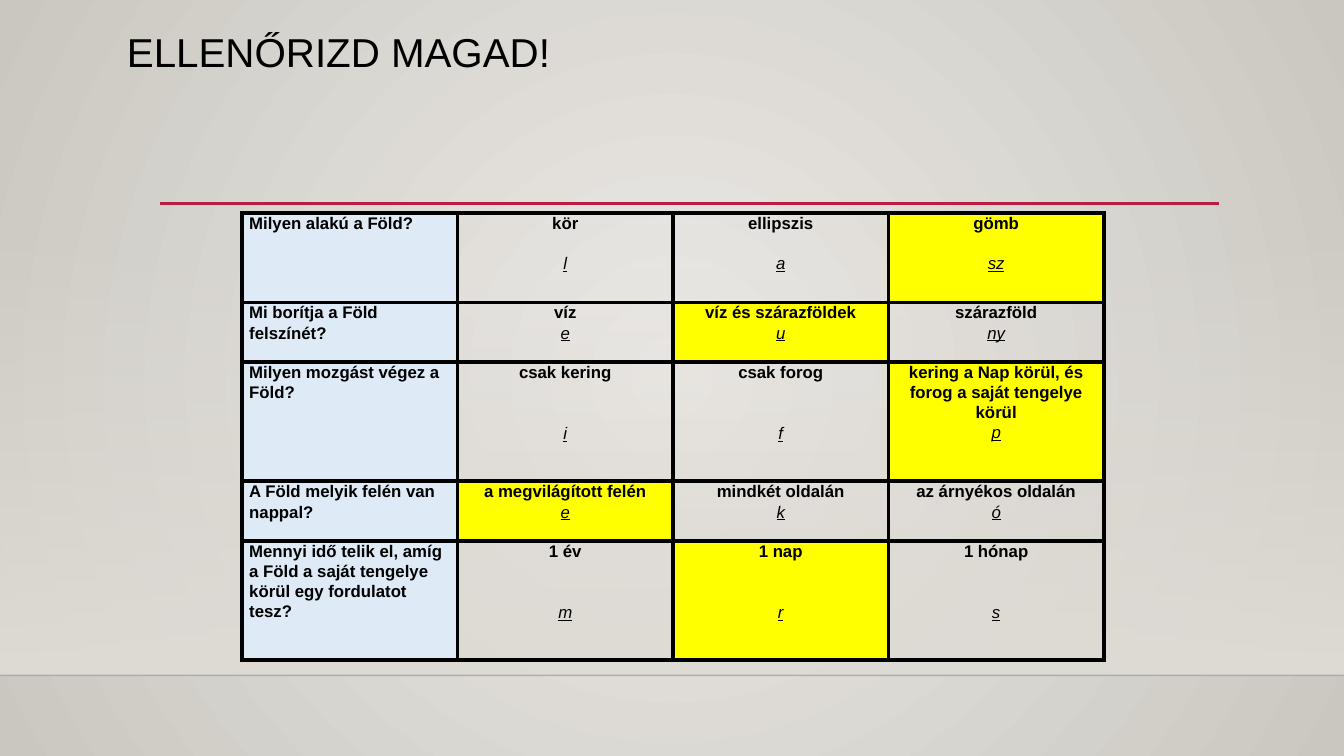
from dataclasses import dataclass

from lxml.etree import SubElement
from pptx import Presentation
from pptx.dml.color import RGBColor
from pptx.enum.shapes import MSO_CONNECTOR as Connector, MSO_SHAPE as Shape
from pptx.enum.text import MSO_ANCHOR as Anchor, PP_ALIGN as Align
from pptx.oxml.ns import qn
from pptx.util import Cm, Pt


@dataclass(frozen=True)
class Theme:
    font: str = "Arial"
    title_size: float = 28.8
    cell_size: float = 12
    blank_line: float = 14.5
    ink: str = "000000"
    accent: str = "B71E42"
    question: str = "DEEAF6"
    correct: str = "FFFF00"
    floor: str = "DFDBD5"
    glow: str = "ECEAE7"
    edge: str = "CAC7C1"


@dataclass(frozen=True)
class Answer:
    text: str
    letter: str
    correct: bool = False
    lines_skipped: int = 0


THEME = Theme()
SLIDE_WIDTH, SLIDE_HEIGHT = Cm(33.87), Cm(19.05)
FLOOR_Y = Cm(17.02)
COLUMN_WIDTH = Cm(5.43)

# Row height in cm, question, answers
QUIZ = [
    (2.26, "Milyen alakú a Föld?", [
        Answer("kör", "l", lines_skipped=1),
        Answer("ellipszis", "a", lines_skipped=1),
        Answer("gömb", "sz", correct=True, lines_skipped=1)]),
    (1.5, "Mi borítja a Föld felszínét?", [
        Answer("víz", "e"),
        Answer("víz és szárazföldek", "u", correct=True),
        Answer("szárazföld", "ny")]),
    (3.01, "Milyen mozgást végez a Föld?", [
        Answer("csak kering", "i", lines_skipped=2),
        Answer("csak forog", "f", lines_skipped=2),
        Answer("kering a Nap körül, és forog a saját tengelye körül", "p",
               correct=True)]),
    (1.5, "A Föld melyik felén van nappal?", [
        Answer("a megvilágított felén", "e", correct=True),
        Answer("mindkét oldalán", "k"),
        Answer("az árnyékos oldalán", "ó")]),
    (3.01, "Mennyi idő telik el, amíg a Föld a saját tengelye körül "
           "egy fordulatot tesz?", [
        Answer("1 év", "m", lines_skipped=2),
        Answer("1 nap", "r", correct=True, lines_skipped=2),
        Answer("1 hónap", "s", lines_skipped=2)]),
]


def rgb(value):
    return RGBColor.from_string(value)


def set_alpha(parent, percent):
    """Make the one RGB colour below parent partly transparent."""
    color = next(parent.iter(qn("a:srgbClr")))
    SubElement(color, qn("a:alpha"), val=str(percent * 1000))


def set_gradient(fill, *colors):
    fill.gradient()
    for stop, color in zip(fill.gradient_stops, colors):
        stop.color.rgb = rgb(color)


def paint_background(page):
    set_gradient(page.background.fill, THEME.glow, THEME.edge)
    gradient = next(page.element.iter(qn("a:gradFill")))
    gradient.remove(gradient.find(qn("a:lin")))
    circle = SubElement(gradient, qn("a:path"), path="circle")
    SubElement(circle, qn("a:fillToRect"),
               {side: "50000" for side in "ltrb"})


def add_wall_shade(page):
    top = Cm(5.61)
    shade = page.shapes.add_shape(Shape.RECTANGLE, 0, top, SLIDE_WIDTH,
                                  FLOOR_Y - top)
    shade.shadow.inherit = False
    shade.line.fill.background()
    set_gradient(shade.fill, THEME.floor, THEME.floor)
    shade.fill.gradient_angle = 270
    set_alpha(next(shade.element.iter(qn("a:gs"))), 0)


def add_rule(page, left, right, y, color, width):
    rule = page.shapes.add_connector(Connector.STRAIGHT, left, y, right, y)
    rule.line.color.rgb = rgb(color)
    rule.line.width = Pt(width)
    properties = rule.element.spPr
    SubElement(properties, qn("a:effectLst"))
    return properties


def add_span(para, text, size, **style):
    span = para.add_run()
    span.text = text
    span.font.name = THEME.font
    span.font.size = Pt(size)
    span.font.color.rgb = rgb(THEME.ink)
    for name, value in style.items():
        setattr(span.font, name, value)


def add_title(page, text):
    box = page.shapes.add_textbox(Cm(2.95), Cm(0.71), Cm(26.67), Cm(1.4))
    frame = box.text_frame
    frame.word_wrap = True
    frame.vertical_anchor = Anchor.TOP
    para = frame.paragraphs[0]
    para.line_spacing = 0.9
    add_span(para, text, THEME.title_size)


def add_borders(cell):
    properties = cell._tc.get_or_add_tcPr()
    for side in ("lnL", "lnR", "lnT", "lnB"):
        border = SubElement(properties, qn(f"a:{side}"), w=str(Pt(3)))
        solid = SubElement(border, qn("a:solidFill"))
        SubElement(solid, qn("a:srgbClr"), val=THEME.ink)


def format_cell(cell, color=None):
    cell.margin_left = cell.margin_right = Cm(0.18)
    cell.margin_top = cell.margin_bottom = 0
    cell.vertical_anchor = Anchor.TOP
    add_borders(cell)
    if color:
        cell.fill.solid()
        cell.fill.fore_color.rgb = rgb(color)
    else:
        cell.fill.background()


def write_line(para, text, align, **style):
    para.alignment = align
    para.line_spacing = 1.07
    add_span(para, text, THEME.cell_size, **style)


def fill_question(cell, question):
    format_cell(cell, THEME.question)
    write_line(cell.text_frame.paragraphs[0], question, Align.LEFT, bold=True)


def fill_answer(cell, answer):
    format_cell(cell, THEME.correct if answer.correct else None)
    frame = cell.text_frame
    write_line(frame.paragraphs[0], answer.text, Align.CENTER, bold=True)
    para = frame.add_paragraph()
    if answer.lines_skipped:
        para.space_before = Pt(answer.lines_skipped * THEME.blank_line)
    write_line(para, answer.letter, Align.CENTER,
               bold=False, italic=True, underline=True)


def add_quiz(page):
    columns = 1 + len(QUIZ[0][2])
    height = Cm(sum(row[0] for row in QUIZ))
    table = page.shapes.add_table(len(QUIZ), columns, Cm(6.1), Cm(5.36),
                                  COLUMN_WIDTH * columns, height).table
    table.first_row = table.horz_banding = False
    for column in table.columns:
        column.width = COLUMN_WIDTH
    for row, (row_height, question, answers) in zip(table.rows, QUIZ):
        row.height = Cm(row_height)
        question_cell, *answer_cells = row.cells
        fill_question(question_cell, question)
        for cell, answer in zip(answer_cells, answers):
            fill_answer(cell, answer)


def main():
    deck = Presentation()
    deck.slide_width, deck.slide_height = SLIDE_WIDTH, SLIDE_HEIGHT
    page = deck.slides.add_slide(deck.slide_layouts[6])
    paint_background(page)
    add_wall_shade(page)
    floor_line = add_rule(page, 0, SLIDE_WIDTH, FLOOR_Y, THEME.ink, 1)
    set_alpha(floor_line, 20)
    add_rule(page, Cm(4.04), Cm(30.73), Cm(5.13), THEME.accent, 2.5)
    add_title(page, "ELLENŐRIZD MAGAD!")
    add_quiz(page)
    deck.save("out.pptx")


if __name__ == "__main__":
    main()
